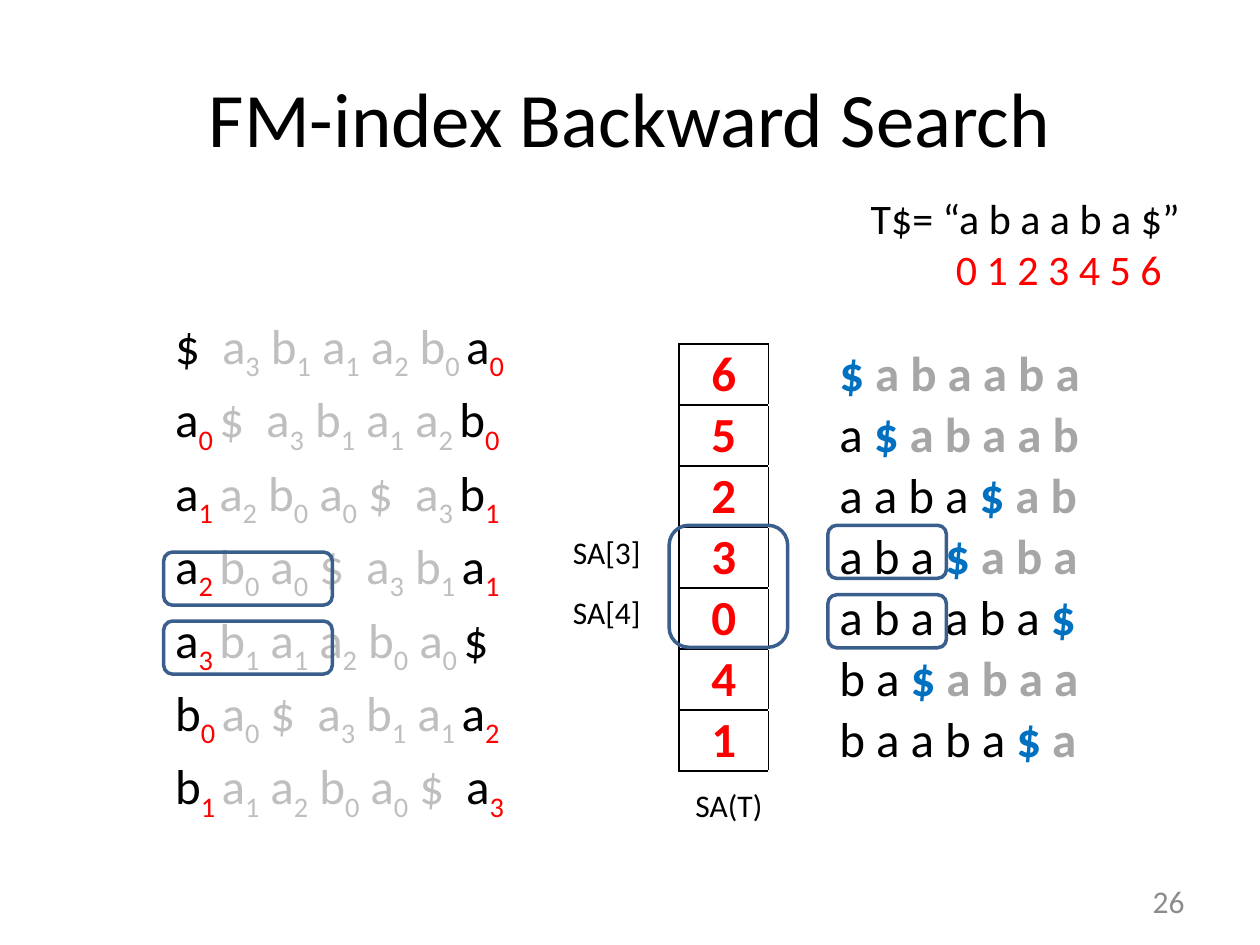
from typing import NamedTuple

from lxml import etree
from pptx import Presentation
from pptx.dml.color import RGBColor
from pptx.enum.shapes import MSO_SHAPE
from pptx.enum.text import MSO_ANCHOR, PP_ALIGN
from pptx.oxml.ns import qn
from pptx.util import Cm, Pt

BLACK = RGBColor(0x00, 0x00, 0x00)
WHITE = RGBColor(0xFF, 0xFF, 0xFF)
RED = RGBColor(0xFF, 0x00, 0x00)
BLUE = RGBColor(0x00, 0x70, 0xC0)
GRAY = RGBColor(0xA6, 0xA6, 0xA6)
PALE = RGBColor(0xBF, 0xBF, 0xBF)
STEEL = RGBColor(0x3A, 0x5F, 0x8C)
DIM = RGBColor(0x8C, 0x8C, 0x8C)
FONT = "Calibri"
ROUND = MSO_SHAPE.ROUNDED_RECTANGLE
MIDDLE = MSO_ANCHOR.MIDDLE
LEFT, CENTER, RIGHT = PP_ALIGN.LEFT, PP_ALIGN.CENTER, PP_ALIGN.RIGHT

TEXT = "abaaba$"
ORDER = [6, 5, 2, 3, 0, 4, 1]  # suffix array of TEXT
RING = ["$", "a3", "b1", "a1", "a2", "b0", "a0"]  # ranked letters, cyclic
LAST = len(RING) - 1


class Box(NamedTuple):
    left: float
    top: float
    width: float
    height: float

    def place(self) -> list:
        return [Cm(side) for side in self]


class Label(NamedTuple):
    box: Box
    text: str


FRAMES = [
    Box(3.3, 11.13, 3.4, 1.07),
    Box(3.3, 12.52, 3.4, 1.07),
    Box(16.69, 10.59, 2.39, 1.07),
    Box(16.69, 11.99, 2.39, 1.07),
    Box(13.49, 10.59, 2.39, 2.46),
]
LABELS = [
    Label(Box(13.77, 15.72, 1.88, 1.02), "SA(T)"),
    Label(Box(11.3, 10.62, 1.88, 1.02), "SA[3]"),
    Label(Box(11.3, 11.84, 1.88, 1.02), "SA[4]"),
]


def add_run(para, text: str, size: int, color: RGBColor,
            bold: bool = False, sub: bool = False) -> None:
    run = para.add_run()
    run.text = text
    font = run.font
    font.name, font.size, font.bold = FONT, Pt(size), bold
    font.color.rgb = color
    if sub:
        run._r.get_or_add_rPr().set("baseline", "-25000")


def add_text(slide, box: Box, align=LEFT, anchor=MSO_ANCHOR.TOP):
    frame = slide.shapes.add_textbox(*box.place()).text_frame
    frame.word_wrap = False
    frame.vertical_anchor = anchor
    frame.paragraphs[0].alignment = align
    return frame


def add_frame(slide, box: Box) -> None:
    shape = slide.shapes.add_shape(ROUND, *box.place())
    shape.shadow.inherit = False
    shape.fill.background()
    shape.line.color.rgb = STEEL
    shape.line.width = Pt(2)


def set_edges(cell, **edges: RGBColor) -> None:
    props = cell._tc.get_or_add_tcPr()
    for spot, side in enumerate(("lnL", "lnR", "lnT", "lnB")):
        line = etree.Element(qn("a:" + side), w=str(Pt(1)))
        fill = etree.SubElement(line, qn("a:solidFill"))
        color = edges.get(side, edges["rest"])
        etree.SubElement(fill, qn("a:srgbClr"), val=str(color))
        props.insert(spot, line)


def add_grid(slide, left: float, top: float, widths: list[float], height: float):
    rows = len(ORDER)
    box = Box(left, top, sum(widths), height * rows)
    grid = slide.shapes.add_table(rows, len(widths), *box.place()).table
    grid.first_row = grid.horz_banding = False
    for col, width in zip(grid.columns, widths):
        col.width = Cm(width)
    for row in grid.rows:
        row.height = Cm(height)
    for cell in grid.iter_cells():
        cell.fill.background()
        cell.vertical_anchor = MIDDLE
        cell.margin_left = cell.margin_right = cell.margin_top = Cm(0.03)
        cell.margin_bottom = 0
    return grid


def add_turn(para, start: int) -> None:
    """Write one rotation of RING; only its first and last letters stand out."""
    turn = RING[start:] + RING[:start]
    for spot, mark in enumerate(turn):
        letter, rank = mark[0], mark[1:]
        edge = spot in (0, LAST)
        lead = "" if edge or spot == 1 or turn[spot - 1] == "$" else " "
        tail = "  " if letter == "$" and spot < LAST else ""
        add_run(para, lead + letter + tail, 28, BLACK if edge else PALE)
        if rank:
            gap = " " if spot in (0, LAST - 1) else ""
            add_run(para, rank + gap, 28, RED if edge else PALE, sub=True)


def add_suffix(para, start: int) -> None:
    """Write the suffix from start, its end mark, then the wrapped rest."""
    head, rest = TEXT[start:-1], TEXT[:start]
    if head:
        add_run(para, " ".join(head) + " ", 28, BLACK)
    add_run(para, "$ " if rest else "$", 28, BLUE, bold=True)
    if rest:
        add_run(para, " ".join(rest), 28, GRAY, bold=True)


def main() -> None:
    deck = Presentation()
    deck.slide_width, deck.slide_height = Cm(25.4), Cm(19.05)
    slide = deck.slides.add_slide(deck.slide_layouts[5])

    # Title and page number
    title = slide.shapes.title
    title.left, title.top, title.width, title.height = Box(1.27, 0.76, 22.86, 3.18).place()
    para = title.text_frame.paragraphs[0]
    para.alignment = CENTER
    add_run(para, "FM-index Backward Search", 44, BLACK)
    page = add_text(slide, Box(18.21, 17.65, 5.92, 1.02), RIGHT, MIDDLE)
    page.word_wrap = True
    add_run(page.paragraphs[0], "26", 18, DIM)

    # Suffix array with its suffixes
    grid = add_grid(slide, 13.69, 6.93, [1.8, 1.4, 6.6], 1.23)
    for row, start in enumerate(ORDER):
        value, space, suffix = (grid.cell(row, col) for col in range(3))
        set_edges(value, rest=BLACK)
        set_edges(space, rest=WHITE, lnL=BLACK)
        set_edges(suffix, rest=WHITE)
        para = value.text_frame.paragraphs[0]
        para.alignment = CENTER
        add_run(para, str(start), 28, RED, bold=True)
        add_suffix(suffix.text_frame.paragraphs[0], start)

    # Sorted rotations
    grid = add_grid(slide, 3.5, 6.32, [8], 1.48)
    for row, start in enumerate(ORDER):
        cell = grid.cell(row, 0)
        set_edges(cell, rest=WHITE)
        add_turn(cell.text_frame.paragraphs[0], (start + 1) % len(RING))

    # Frames around the matches, and labels
    for box in FRAMES:
        add_frame(slide, box)
    for label in LABELS:
        add_run(add_text(slide, label.box).paragraphs[0], label.text, 18, BLACK)

    # Text with its positions
    frame = add_text(slide, Box(17.3, 3.76, 6.78, 2.31))
    add_run(frame.paragraphs[0], f"T$= “{' '.join(TEXT)}”", 24, BLACK)
    para = frame.add_paragraph()
    para._p.get_or_add_pPr().set("marL", str(Cm(1.72)))
    add_run(para, " ".join(str(spot) for spot in range(len(TEXT))), 24, RED)

    deck.save("out.pptx")


if __name__ == "__main__":
    main()
